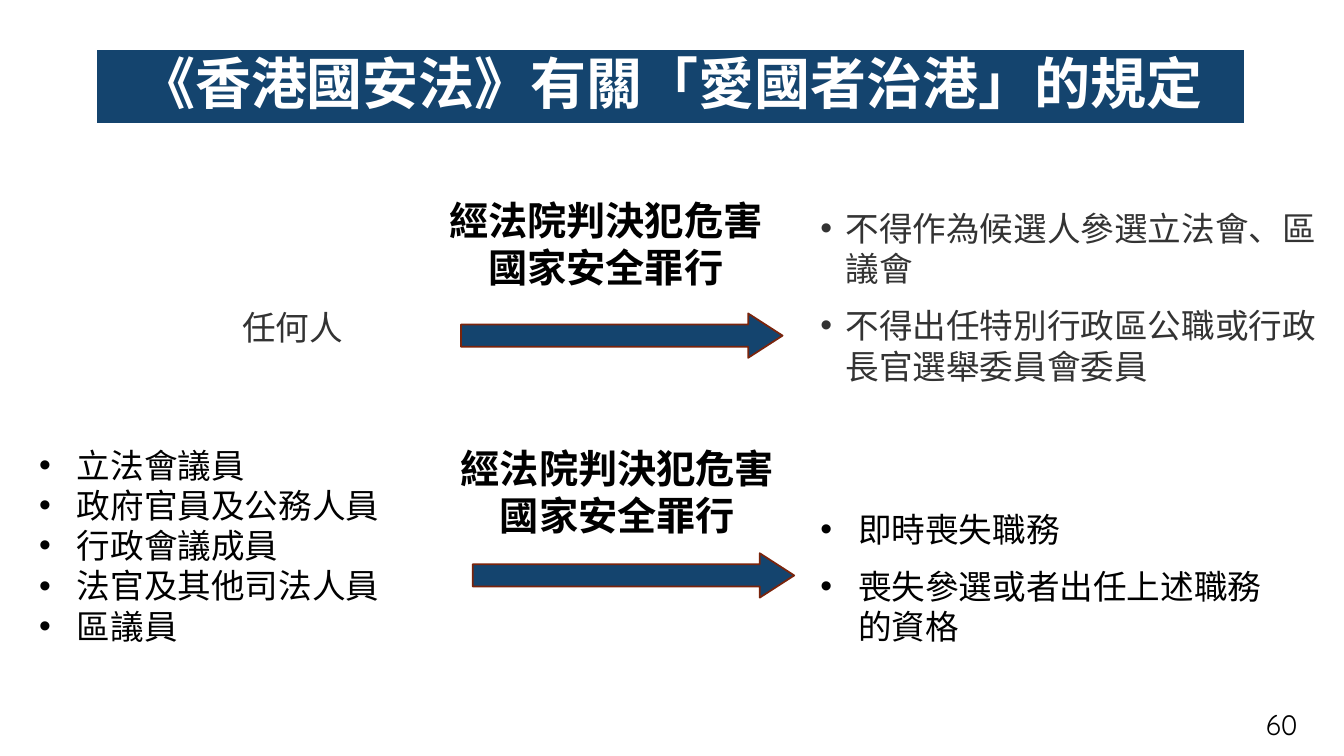
from lxml.etree import SubElement
from pptx import Presentation
from pptx.dml.color import RGBColor
from pptx.enum.shapes import MSO_SHAPE
from pptx.enum.text import MSO_ANCHOR, PP_ALIGN
from pptx.oxml.ns import qn
from pptx.util import Pt

NAVY = "14446E"
BROWN = "7A240C"
WHITE = "FFFFFF"
BLACK = "000000"
GREY = "333333"
CONDITION = ["經法院判決犯危害", "國家安全罪行"]


def color(value):
    return RGBColor.from_string(value)


def paint(shape, line):
    shape.fill.solid()
    shape.fill.fore_color.rgb = color(NAVY)
    shape.line.color.rgb = color(line)
    shape.line.width = Pt(1.25)


def style(paragraph, size, hue, bold=False, name="Calibri"):
    paragraph.font.name = name
    paragraph.font.size = Pt(size)
    paragraph.font.bold = bold
    paragraph.font.color.rgb = color(hue)


def add_bullet(paragraph, indent):
    properties = paragraph._p.get_or_add_pPr()
    properties.set("marL", str(Pt(indent)))
    properties.set("indent", str(-Pt(indent)))
    SubElement(properties, qn("a:buFont"), typeface="Arial")
    SubElement(properties, qn("a:buChar"), char="•")


def add_text(slide, box, lines, size=24, hue=BLACK, bold=False, name="Calibri",
             align=PP_ALIGN.LEFT, indent=0, gap=0, spacing=1.0, anchor=MSO_ANCHOR.TOP):
    frame = slide.shapes.add_textbox(*map(Pt, box)).text_frame
    frame.word_wrap = True
    frame.vertical_anchor = anchor
    for index, line in enumerate(lines):
        paragraph = frame.add_paragraph() if index else frame.paragraphs[0]
        paragraph.text = line
        paragraph.alignment = align
        paragraph.line_spacing = spacing
        if index and gap:
            paragraph.space_before = Pt(gap)
        if indent:
            add_bullet(paragraph, indent)
        style(paragraph, size, hue, bold, name)


def add_title(slide, box, text):
    title = slide.shapes.title
    title.left, title.top, title.width, title.height = map(Pt, box)
    geometry = SubElement(title._element.spPr, qn("a:prstGeom"), prst="roundRect")
    SubElement(geometry, qn("a:avLst"))
    paint(title, WHITE)
    frame = title.text_frame
    frame.text = text
    frame.word_wrap = True
    frame.vertical_anchor = MSO_ANCHOR.MIDDLE
    frame.margin_left = frame.margin_right = Pt(19.5)
    frame.margin_top = frame.margin_bottom = Pt(2)
    paragraph = frame.paragraphs[0]
    paragraph.alignment = PP_ALIGN.CENTER
    paragraph.line_spacing = 0.9
    style(paragraph, 40, WHITE, True)


def add_condition(slide, box):
    left, top, width, height = box
    add_text(slide, (left, top, width, 75), CONDITION, 28, bold=True, align=PP_ALIGN.CENTER)
    arrow_height = 31.7
    arrow = slide.shapes.add_shape(
        MSO_SHAPE.RIGHT_ARROW, Pt(left + 18.3), Pt(top + height - arrow_height),
        Pt(229.7), Pt(arrow_height))
    arrow.adjustments[0] = 0.5
    arrow.adjustments[1] = 0.776
    arrow.shadow.inherit = False
    paint(arrow, BROWN)


def add_anyone_rule(slide, box):
    left, top, width, height = box
    add_text(slide, (left, top + 64.8, 132.5, 46), ["任何人"], hue=GREY,
             align=PP_ALIGN.RIGHT, spacing=1.5)
    add_condition(slide, (left + 191.3, top, 243.4, 118.8))
    add_text(slide, (left + width - 369, top + 8, 369, height - 8),
             ["不得作為候選人參選立法會、區議會", "不得出任特別行政區公職或行政長官選舉委員會委員"],
             hue=GREY, indent=18, gap=12)


def add_officials_rule(slide, box):
    left, top, width, height = box
    add_text(slide, (left, top, 303, height),
             ["立法會議員", "政府官員及公務人員", "行政會議成員", "法官及其他司法人員", "區議員"],
             indent=27)
    add_condition(slide, (left + 298.4, top, 243.4, 113))
    add_text(slide, (left + width - 347, top + 46, 347, 93),
             ["即時喪失職務", "喪失參選或者出任上述職務的資格"], indent=27, gap=12)


def main():
    presentation = Presentation()
    presentation.slide_width = Pt(960)
    presentation.slide_height = Pt(540)
    slide = presentation.slides.add_slide(presentation.slide_layouts[5])
    add_title(slide, (68.7, 34.8, 820.6, 53.8), "《香港國安法》有關「愛國者治港」的規定")
    add_anyone_rule(slide, (119.7, 136.8, 828.2, 152.7))
    add_officials_rule(slide, (20.9, 313.9, 905, 155.5))
    add_text(slide, (718, 502.6, 216, 28.8), ["60"], 20, name="Quicksand",
             align=PP_ALIGN.RIGHT, anchor=MSO_ANCHOR.MIDDLE)
    presentation.save("out.pptx")


if __name__ == "__main__":
    main()
